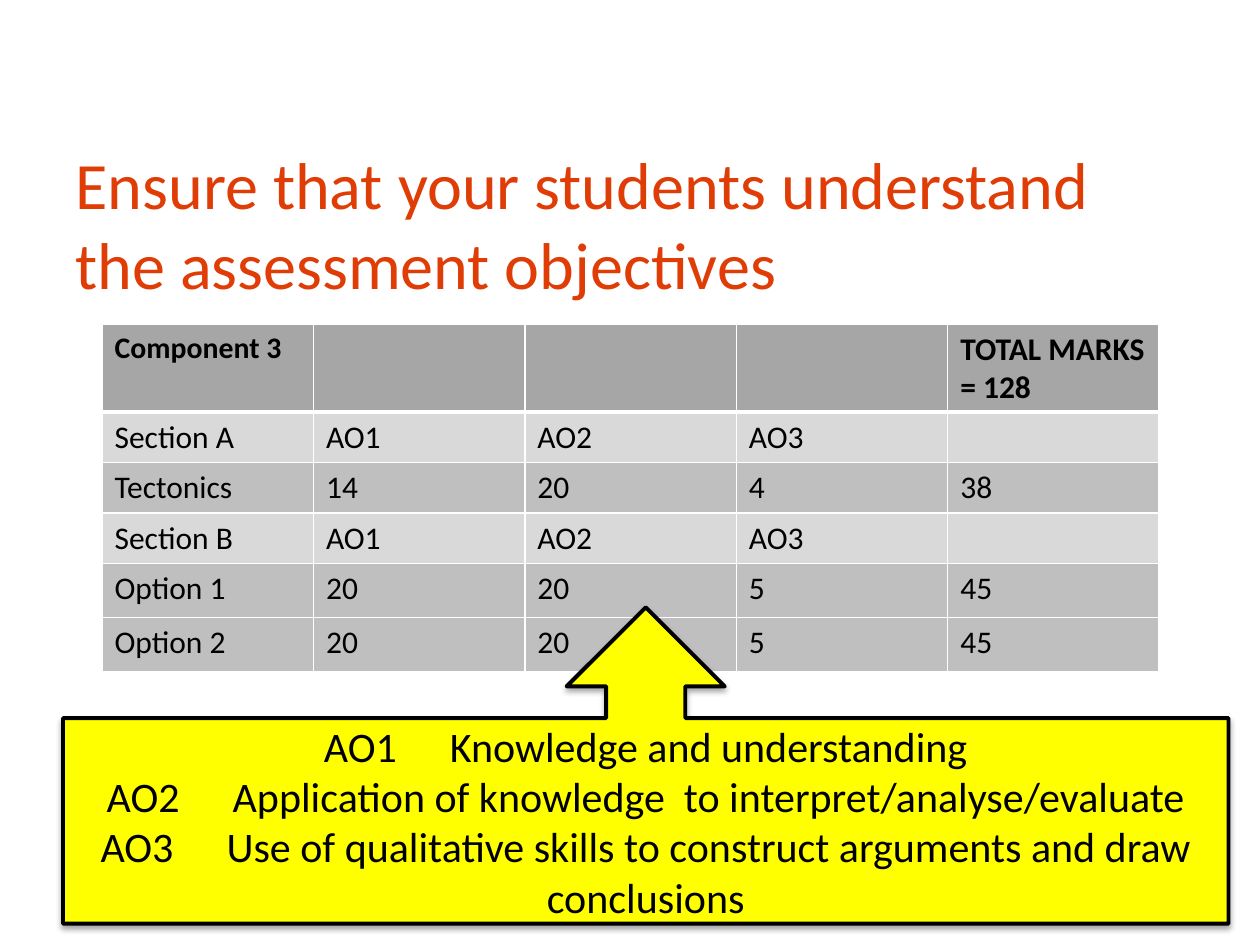
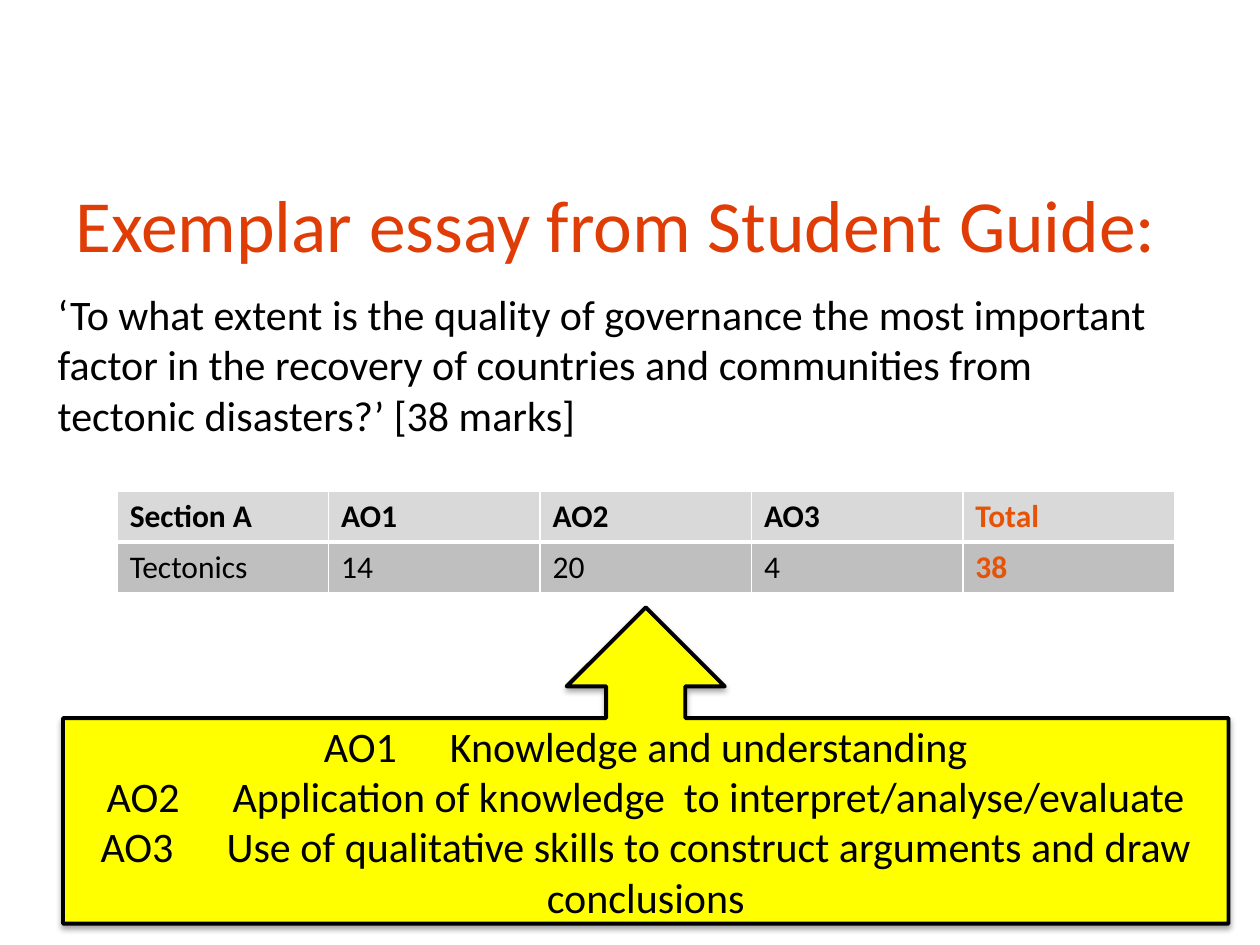
from lxml import etree
from pptx import Presentation
from pptx.dml.color import RGBColor as RGB
from pptx.enum.shapes import MSO_SHAPE as SHAPE
from pptx.enum.text import MSO_ANCHOR as ANCHOR, PP_ALIGN as ALIGN
from pptx.oxml import parse_xml
from pptx.oxml.ns import nsdecls, qn
from pptx.util import Inches, Pt

FONT = "Calibri"
BLACK = RGB(0x00, 0x00, 0x00)
WHITE = RGB(0xFF, 0xFF, 0xFF)
RED = RGB(0xDF, 0x3C, 0x06)
ORANGE = RGB(0xE7, 0x53, 0x06)
YELLOW = RGB(0xFF, 0xFF, 0x00)
DARK = RGB(0xA6, 0xA6, 0xA6)
MID = RGB(0xBF, 0xBF, 0xBF)
LIGHT = RGB(0xD9, 0xD9, 0xD9)

GOALS = [
    "AO1\tKnowledge and understanding",
    "AO2\tApplication of knowledge  to interpret/analyse/evaluate",
    "AO3\tUse of qualitative skills to construct arguments and draw conclusions",
]


def write(frame, text, size=18, color=BLACK, bold=False, align=ALIGN.LEFT):
    """Fill a text frame with one paragraph per line of text."""
    for num, line in enumerate(text.split("\n")):
        para = frame.paragraphs[0] if num == 0 else frame.add_paragraph()
        para.alignment = align
        run = para.add_run()
        run.text = line
        font = run.font
        font.name, font.size, font.bold = FONT, Pt(size), bold
        font.color.rgb = color


def border(cell, low=1):
    """Draw white cell edges; low is the width of the bottom one."""
    props = cell._tc.get_or_add_tcPr()
    for side, width in zip("LRTB", (1, 1, 1, low)):
        edge = etree.SubElement(props, qn(f"a:ln{side}"), w=str(Pt(width)))
        fill = etree.SubElement(edge, qn("a:solidFill"))
        etree.SubElement(fill, qn("a:srgbClr"), val=str(WHITE))


class Deck:
    def __init__(self):
        self.prs = Presentation()
        self.prs.slide_width, self.prs.slide_height = Inches(10), Inches(7.5)
        self.slide = None

    def page(self, title, size):
        self.slide = self.prs.slides.add_slide(self.prs.slide_layouts[6])
        self.text(title, 0.5, 1.17, 9, 1.2, anchor=ANCHOR.MIDDLE,
                  size=size, color=RED)

    def text(self, text, left, top, width, height, anchor=ANCHOR.TOP, **style):
        box = self.slide.shapes.add_textbox(
            Inches(left), Inches(top), Inches(width), Inches(height))
        frame = box.text_frame
        frame.word_wrap = True
        frame.vertical_anchor = anchor
        write(frame, text, **style)

    def table(self, rows, left, top, highs, fills, styles):
        """styles maps (row, column) to the format of a special cell."""
        cols = len(rows[0])
        grid = self.slide.shapes.add_table(
            len(rows), cols, Inches(left), Inches(top),
            Inches(8.39), Inches(sum(highs))).table
        for col in grid.columns:
            col.width = Inches(8.39 / cols)
        for r, row in enumerate(rows):
            grid.rows[r].height = Inches(highs[r])
            for c, text in enumerate(row):
                cell = grid.cell(r, c)
                border(cell, low=3 if r == 0 else 1)
                cell.fill.solid()
                cell.fill.fore_color.rgb = fills[r]
                if text:
                    style = {"bold": r == 0, **styles.get((r, c), {})}
                    write(cell.text_frame, text, **style)

    def callout(self, lines):
        shape = self.slide.shapes.add_shape(
            SHAPE.UP_ARROW_CALLOUT,
            Inches(0.5), Inches(4.82), Inches(9.25), Inches(2.51))
        shape.fill.solid()
        shape.fill.fore_color.rgb = YELLOW
        shape.line.color.rgb = BLACK
        shape.line.width = Pt(2.25)
        # Soft shadow straight below
        shape.shadow.inherit = False
        shape._element.spPr.find(qn("a:effectLst")).append(parse_xml(
            f'<a:outerShdw {nsdecls("a")} blurRad="{Pt(3.1)}" dist="{Pt(1.8)}"'
            ' dir="5400000" rotWithShape="0"><a:srgbClr val="000000">'
            '<a:alpha val="35000"/></a:srgbClr></a:outerShdw>'))
        frame = shape.text_frame
        frame.word_wrap = True
        frame.vertical_anchor = ANCHOR.MIDDLE
        write(frame, "\n".join(lines), size=24, align=ALIGN.CENTER)


def main():
    deck = Deck()
    aims = ["AO1", "AO2", "AO3"]
    marks = ["Tectonics", "14", "20", "4", "38"]
    option = ["20", "20", "5", "45"]

    # Marks for the whole component
    deck.page("Ensure that your students understand the assessment objectives",
              37.8)
    deck.table(
        [["Component 3", "", "", "", "TOTAL MARKS = 128"],
         ["Section A", *aims, ""],
         marks,
         ["Section B", *aims, ""],
         ["Option 1", *option],
         ["Option 2", *option]],
        0.81, 2.57, [0.59, 0.38, 0.4, 0.36, 0.43, 0.43],
        [DARK, LIGHT, MID, LIGHT, MID, MID], {(0, 0): {"size": 17}})
    deck.callout(GOALS)

    # Essay question and its marks
    deck.page("Exemplar essay from Student Guide:", 42)
    deck.callout(GOALS)
    deck.text("‘To what extent is the quality of governance the most important "
              "factor in the recovery of countries and communities from "
              "tectonic disasters?’ [38 marks]",
              0.36, 2.24, 8.99, 1.31, size=24)
    total = {"color": ORANGE, "bold": True}
    deck.table([["Section A", *aims, "Total"], marks],
               0.93, 3.9, [0.38, 0.4], [LIGHT, MID],
               {(0, 4): total, (1, 4): total})

    deck.prs.save("out.pptx")


if __name__ == "__main__":
    main()
